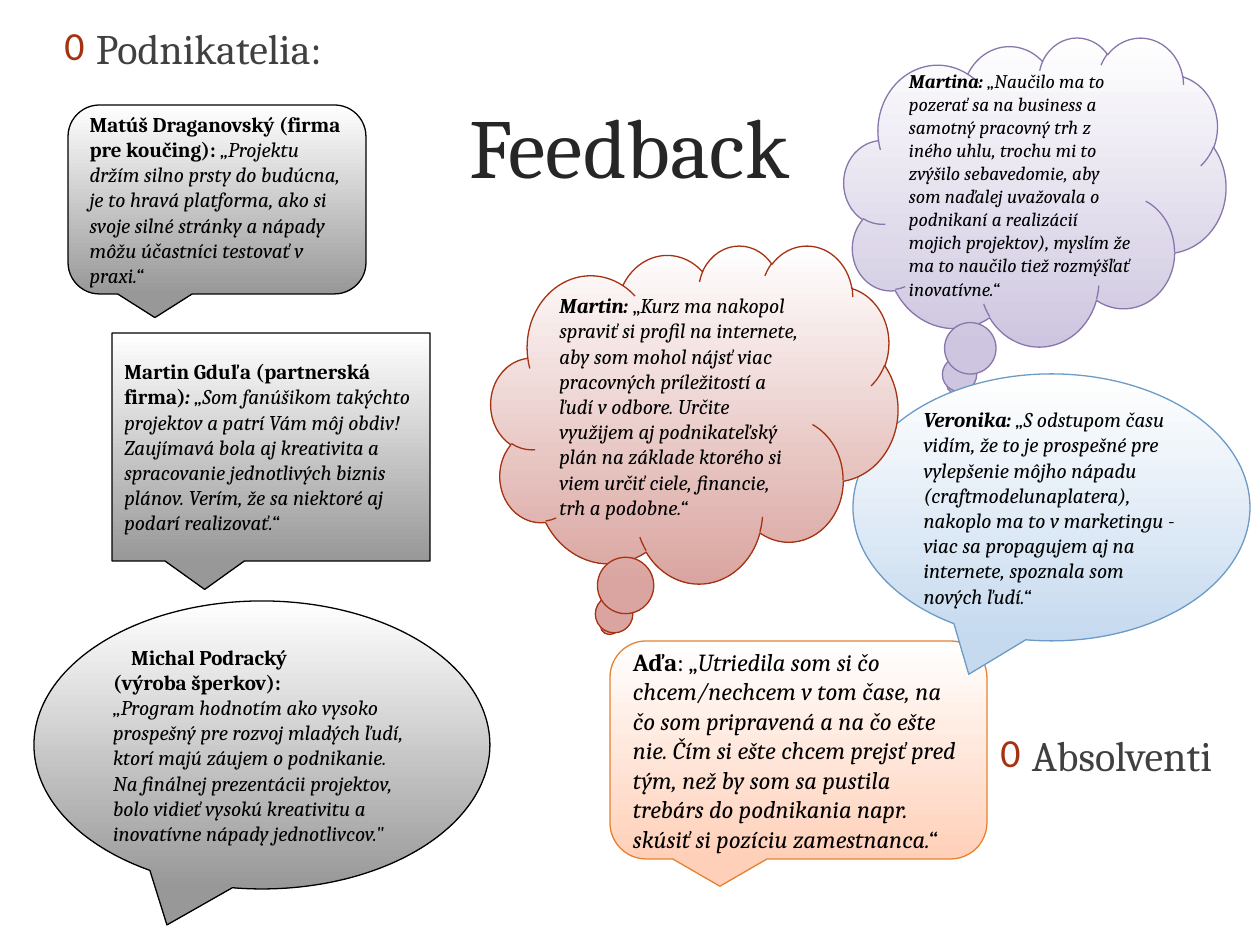
from lxml import etree
from pptx import Presentation
from pptx.dml.color import RGBColor
from pptx.enum.shapes import MSO_SHAPE
from pptx.enum.text import MSO_ANCHOR, PP_ALIGN
from pptx.oxml.ns import qn
from pptx.util import Emu, Pt

PX = 914400 // 126
FONT = "Cambria"
BLACK = RGBColor(0x00, 0x00, 0x00)
WHITE = RGBColor(0xFF, 0xFF, 0xFF)
TITLE = RGBColor(0x26, 0x26, 0x26)
HEADING = RGBColor(0x40, 0x40, 0x40)
GRAY = RGBColor(0x98, 0x98, 0x98)
PEACH = RGBColor(0xFF, 0xD0, 0xB9)
ORANGE = RGBColor(0xE6, 0x82, 0x30)
LILAC = RGBColor(0xCE, 0xC6, 0xE0)
PURPLE = RGBColor(0x89, 0x76, 0xAC)
PALE_BLUE = RGBColor(0xC6, 0xDA, 0xEF)
BLUE = RGBColor(0x6B, 0x9B, 0xC7)
ROSE = RGBColor(0xDA, 0xA5, 0xA0)
RED = RGBColor(0xA6, 0x32, 0x12)

ELLIPSE = MSO_SHAPE.OVAL_CALLOUT
ROUNDED = MSO_SHAPE.ROUNDED_RECTANGULAR_CALLOUT
RECTANGLE = MSO_SHAPE.RECTANGULAR_CALLOUT
CLOUD = MSO_SHAPE.CLOUD_CALLOUT
MIDDLE, TOP = MSO_ANCHOR.MIDDLE, MSO_ANCHOR.TOP
LEFT, CENTER = PP_ALIGN.LEFT, PP_ALIGN.CENTER


def add_span(para, text, size, color, style=""):
    """Add a run; style holds b for bold and i for italic."""
    span = para.add_run()
    span.text = text
    span.font.name = FONT
    span.font.size = Pt(size)
    span.font.color.rgb = color
    span.font.bold = "b" in style
    span.font.italic = "i" in style


def add_label(place, text, size, color, align, anchor):
    box = page.shapes.add_textbox(*[Emu(value * PX) for value in place])
    box.text_frame.word_wrap = True
    box.text_frame.vertical_anchor = anchor
    para = box.text_frame.paragraphs[0]
    para.alignment = align
    add_span(para, text, size, color)
    return para


deck = Presentation()
deck.slide_width = Emu(1260 * PX)
deck.slide_height = Emu(945 * PX)
page = deck.slides.add_slide(deck.slide_layouts[6])

add_label((292, 45, 675, 199), "Feedback", 48, TITLE, CENTER, MIDDLE)

headings = [
    ((52, 16, 416, 74), "Podnikatelia:"),
    ((988, 723, 258, 74), "Absolventi"),
]
for place, text in headings:
    para = add_label(place, text, 24, HEADING, LEFT, TOP)
    properties = para._p.get_or_add_pPr()
    properties.set("marL", "228600")
    properties.set("indent", "-228600")
    bullet_color = etree.SubElement(properties, qn("a:buClr"))
    etree.SubElement(bullet_color, qn("a:srgbClr"), val=str(RED))
    etree.SubElement(properties, qn("a:buSzPct"), val="95000")
    etree.SubElement(properties, qn("a:buFont"), typeface="Calibri")
    etree.SubElement(properties, qn("a:buChar"), char="0")

# Kind, place, fill, line, text size, paragraphs of (text, style) spans
callouts = [
    (ELLIPSE, (34, 601, 456, 288), GRAY, BLACK, 12, [
        [("Michal Podracký", "b")],
        [("(výroba šperkov): ", "b"), ("\n", ""),
         ("„Program hodnotím ako vysoko prospešný pre rozvoj mladých ľudí, "
          "ktorí majú záujem o podnikanie. Na finálnej prezentácii projektov, "
          "bolo vidieť vysokú kreativitu a inovatívne nápady jednotlivcov.\"", "i")],
    ]),
    (ROUNDED, (68, 105, 298, 189), GRAY, BLACK, 12, [
        [("Matúš Draganovský (firma pre koučing): ", "b"),
         ("„Projektu držím silno prsty do budúcna, je to hravá platforma, "
          "ako si svoje silné stránky a nápady môžu účastníci testovať "
          "v praxi.“", "i")],
    ]),
    (RECTANGLE, (112, 333, 318, 228), GRAY, BLACK, 12, [
        [("Martin Gduľa (partnerská firma)", "b"), (": ", "bi"),
         ("„Som fanúšikom takýchto projektov a patrí Vám môj obdiv! "
          "Zaujímavá bola aj kreativita a spracovanie jednotlivých biznis "
          "plánov. Verím, že sa niektoré aj podarí realizovať.“", "i")],
    ]),
    (ROUNDED, (610, 641, 377, 218), PEACH, ORANGE, 14, [
        [("Aďa", "b"), (": „", ""),
         ("Utriedila som si čo chcem/nechcem v tom čase, na čo som "
          "pripravená a na čo ešte nie. Čím si ešte chcem prejsť pred tým, "
          "než by som sa pustila trebárs do podnikania napr. skúsiť si "
          "pozíciu zamestnanca.“", "i")],
    ]),
    (CLOUD, (844, 37, 382, 309), LILAC, PURPLE, 11, [
        [("Martina: ", "bi"),
         ("„Naučilo ma to pozerať sa na business a samotný pracovný trh "
          "z iného uhlu, trochu mi to zvýšilo sebavedomie, aby som naďalej "
          "uvažovala o podnikaní a realizácií mojich projektov), myslím že "
          "ma to naučilo tiež rozmýšľať inovatívne.“", "i")],
    ]),
    (ELLIPSE, (853, 374, 397, 267), PALE_BLUE, BLUE, 12, [
        [("Veronika: ", "bi"),
         ("„S odstupom času vidím, že to je prospešné pre vylepšenie môjho "
          "nápadu (craftmodelunaplatera), nakoplo ma to v marketingu - viac "
          "sa propagujem aj na internete, spoznala som nových ľudí.“", "i")],
    ]),
    (CLOUD, (491, 245, 407, 338), ROSE, RED, 12, [
        [("Martin: ", "bi"), ("„", ""),
         ("Kurz ma nakopol spraviť si profil na internete, aby som mohol "
          "nájsť viac pracovných príležitostí a ľudí v odbore. Určite "
          "využijem aj podnikateľský plán na základe ktorého si viem určiť "
          "ciele, financie, trh a podobne.“", "i")],
    ]),
]
for kind, place, fill, line, size, paragraphs in callouts:
    callout = page.shapes.add_shape(kind, *[Emu(value * PX) for value in place])
    callout.shadow.inherit = False
    callout.fill.gradient()
    callout.fill.gradient_angle = 270
    for stop, color in zip(callout.fill.gradient_stops, (WHITE, fill)):
        stop.color.rgb = color
    callout.line.color.rgb = line
    callout.line.width = Pt(0.75)
    frame = callout.text_frame
    frame.word_wrap = True
    frame.vertical_anchor = MIDDLE
    for index, spans in enumerate(paragraphs):
        para = frame.add_paragraph() if index else frame.paragraphs[0]
        para.alignment = LEFT
        if len(spans) == 1:
            para._p.get_or_add_pPr().set("indent", str(18 * PX))
        for text, style in spans:
            if text == "\n":
                para.add_line_break()
            else:
                add_span(para, text, size, BLACK, style)

deck.save("out.pptx")
